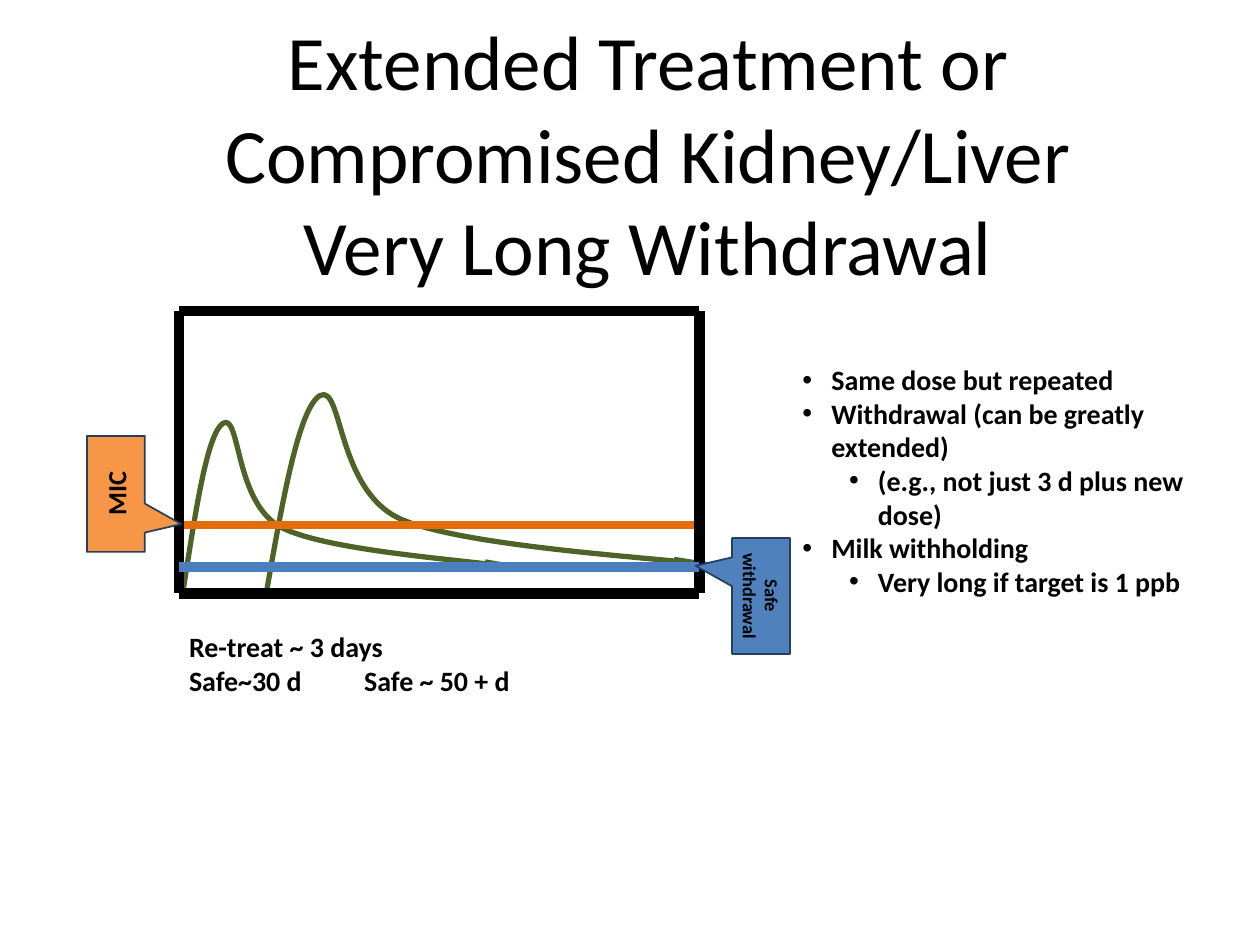
from lxml.etree import SubElement
from pptx import Presentation
from pptx.dml.color import RGBColor
from pptx.enum.shapes import MSO_CONNECTOR, MSO_SHAPE
from pptx.enum.text import MSO_ANCHOR, MSO_AUTO_SIZE, PP_ALIGN
from pptx.oxml.ns import qn
from pptx.util import Inches, Pt

BLACK, WHITE, GREEN = "000000", "FFFFFF", "4F6228"
LEFT, RIGHT, TOP, BASE = 1.42, 5.55, 2.47, 4.71
MIC, SAFE = 4.17, 4.5


def tint(code):
    return RGBColor.from_string(code)


def write(para, text, size=16, bold=True, color=BLACK, align=PP_ALIGN.LEFT):
    para.text = text
    para.alignment = align
    para.font.size = Pt(size)
    para.font.bold = bold
    para.font.name = "Calibri"
    para.font.color.rgb = tint(color)
    for run in para.runs:
        run.font.size = Pt(size)
        run.font.bold = bold
        run.font.name = "Calibri"
        run.font.color.rgb = tint(color)


class Deck:
    def __init__(self):
        self.file = Presentation()
        self.file.slide_width = Inches(10)
        self.file.slide_height = Inches(7.5)
        self.slide = self.file.slides.add_slide(self.file.slide_layouts[5])
        self.shapes = self.slide.shapes

    def inset(self, frame, side, edge):
        frame.word_wrap = True
        frame.margin_left = frame.margin_right = Inches(side)
        frame.margin_top = frame.margin_bottom = Inches(edge)

    def title(self, text, x, y, w, h):
        box = self.shapes.title
        box.left, box.top, box.width, box.height = map(Inches, (x, y, w, h))
        frame = box.text_frame
        self.inset(frame, 0, 0.05)
        frame.auto_size = MSO_AUTO_SIZE.NONE
        frame.vertical_anchor = MSO_ANCHOR.MIDDLE
        write(frame.paragraphs[0], text, size=44, bold=False, align=PP_ALIGN.CENTER)

    def curve(self, x, y, w, h, points):
        pen = self.shapes.build_freeform(Inches(x), Inches(y))
        pen.add_line_segments([(Inches(x + w), Inches(y + h))], close=False)
        shape = pen.convert_to_shape()
        track = shape._element.find(".//" + qn("a:path"))
        for part in list(track):
            track.remove(part)
        for i, (px, py) in enumerate(points):
            if i == 0:
                step = SubElement(track, qn("a:moveTo"))
            elif i % 3 == 1:
                step = SubElement(track, qn("a:cubicBezTo"))
            SubElement(step, qn("a:pt"), x=str(Inches(px - x)), y=str(Inches(py - y)))
        shape.shadow.inherit = False
        shape.fill.background()
        shape.line.color.rgb = tint(GREEN)
        shape.line.width = Pt(3)

    def line(self, x1, y1, x2, y2, color=BLACK, width=6):
        ends = map(Inches, (x1, y1, x2, y2))
        line = self.shapes.add_connector(MSO_CONNECTOR.STRAIGHT, *ends)
        line.line.color.rgb = tint(color)
        line.line.width = Pt(width)
        SubElement(line._element.spPr, qn("a:effectLst"))

    def block(self, kind, x, y, w, h, fill):
        shape = self.shapes.add_shape(kind, *map(Inches, (x, y, w, h)))
        shape.shadow.inherit = False
        shape.fill.solid()
        shape.fill.fore_color.rgb = tint(fill)
        shape.line.fill.background()
        self.inset(shape.text_frame, 0.08, 0.04)
        return shape

    def callout(self, text, x, y, turn, fill, size):
        shape = self.block(MSO_SHAPE.RECTANGULAR_CALLOUT, x, y, 0.92, 0.46, fill)
        shape.rotation = turn
        shape.adjustments[0] = -0.26
        shape.adjustments[1] = 1.13
        shape.line.color.rgb = tint("243F60")
        shape.line.width = Pt(1)
        shape.text_frame.vertical_anchor = MSO_ANCHOR.MIDDLE
        write(shape.text_frame.paragraphs[0], text, size=size, align=PP_ALIGN.CENTER)

    def label(self, text, x, y, w, h, tab):
        frame = self.block(MSO_SHAPE.RECTANGLE, x, y, w, h, WHITE).text_frame
        frame.vertical_anchor = MSO_ANCHOR.TOP
        frame.auto_size = MSO_AUTO_SIZE.SHAPE_TO_FIT_TEXT
        para = frame.paragraphs[0]
        stops = SubElement(para._p.get_or_add_pPr(), qn("a:tabLst"))
        SubElement(stops, qn("a:tab"), pos=str(Inches(tab)), algn="l")
        write(para, text)

    def list(self, rows, x, y, w, h):
        frame = self.shapes.add_textbox(*map(Inches, (x, y, w, h))).text_frame
        self.inset(frame, 0.1, 0.05)
        frame.auto_size = MSO_AUTO_SIZE.SHAPE_TO_FIT_TEXT
        for i, (level, text) in enumerate(rows):
            para = frame.add_paragraph() if i else frame.paragraphs[0]
            para.level = level
            props = para._p.get_or_add_pPr()
            props.set("marL", str(Inches(0.23 + 0.37 * level)))
            props.set("indent", str(Inches(-0.23)))
            SubElement(props, qn("a:buFont"), typeface="Arial")
            SubElement(props, qn("a:buChar"), char="•")
            write(para, text)


def main():
    deck = Deck()
    deck.title("Extended Treatment or Compromised Kidney/Liver\vVery Long Withdrawal",
               0.69, 0.81, 8.91, 0.8)
    deck.curve(2.11, 3.13, 3.66, 1.6,
               [(2.11, 4.73), (2.24, 3.99), (2.37, 3.24), (2.54, 3.14),
                (2.72, 3.04), (2.67, 3.89), (3.18, 4.12),
                (3.68, 4.34), (5.24, 4.43), (5.6, 4.48),
                (5.96, 4.54), (5.66, 4.49), (5.35, 4.44)])
    deck.curve(1.45, 3.35, 2.7, 1.36,
               [(1.45, 4.71), (1.55, 4.08), (1.64, 3.45), (1.77, 3.36),
                (1.91, 3.27), (1.86, 4), (2.24, 4.19),
                (2.62, 4.38), (3.77, 4.45), (4.03, 4.5),
                (4.3, 4.54), (4.08, 4.5), (3.85, 4.46)])
    deck.line(LEFT, MIC, RIGHT, MIC, "E46C0A", 4.5)
    for x in (LEFT, RIGHT):
        deck.line(x, TOP, x, BASE)
    for y in (BASE, TOP):
        deck.line(LEFT, y, RIGHT, y)
    deck.line(LEFT, SAFE, RIGHT, SAFE, "4B7EBC")
    deck.callout("Safe withdrawal", 5.58, 4.5, 90, "4F81BD", 10.5)
    deck.callout("MIC", 0.46, 3.69, 270, "F79646", 15)
    deck.label("Re-treat ~ 3 days\vSafe~30 d\tSafe ~ 50 + d",
               LEFT, 4.96, 4.25, 0.61, tab=1.39)
    deck.list([(0, "Same dose but repeated"),
               (0, "Withdrawal (can be greatly extended)"),
               (1, "(e.g., not just 3 d plus new dose)"),
               (0, "Milk withholding"),
               (1, "Very long if target is 1 ppb")], 6.27, 2.83, 3.74, 1.99)
    deck.file.save("out.pptx")


if __name__ == "__main__":
    main()
